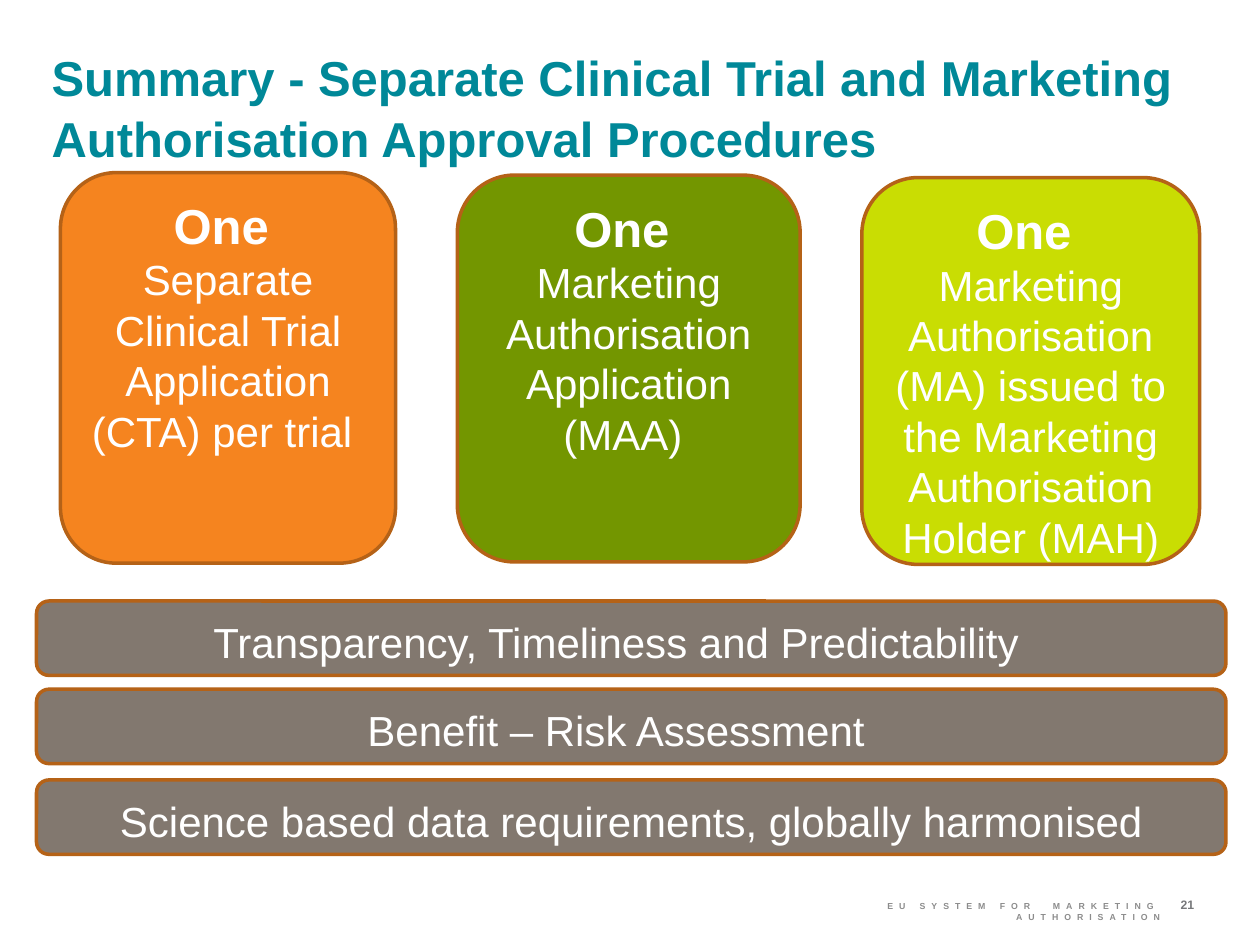
from dataclasses import dataclass

from pptx import Presentation
from pptx.dml.color import RGBColor as RGB
from pptx.enum.shapes import MSO_SHAPE as Shape
from pptx.enum.text import MSO_ANCHOR as Anchor, MSO_AUTO_SIZE as Fit, PP_ALIGN as Align
from pptx.util import Inches, Pt


@dataclass(frozen=True)
class Theme:
    font: str = "Arial"
    teal: str = "008898"
    orange: str = "F5841F"
    green: str = "739600"
    lime: str = "C9DD03"
    taupe: str = "82786F"
    rust: str = "B56217"
    white: str = "FFFFFF"
    silver: str = "8C8C8C"
    grey: str = "77787B"
    head: int = 28
    body: int = 24
    page: int = 7
    foot: int = 5


class Deck:
    """Draw styled elements on the current slide."""

    def __init__(self, prs, theme):
        self.theme = theme
        self.slide = prs.slides.add_slide(prs.slide_layouts[5])

    def frame(self, shape, pad=(0, 0, 0, 0), anchor=Anchor.TOP):
        left, top, right, base = map(Inches, pad)
        form = dict(word_wrap=True, auto_size=Fit.NONE, vertical_anchor=anchor,
                    margin_left=left, margin_top=top, margin_right=right, margin_bottom=base)
        for key, val in form.items():
            setattr(shape.text_frame, key, val)
        return shape.text_frame

    def words(self, para, text, size, color, bold=False, align=Align.LEFT, track=0):
        para.alignment = align
        run = para.add_run()
        run.text = text
        form = dict(name=self.theme.font, size=Pt(size), bold=bold)
        for key, val in form.items():
            setattr(run.font, key, val)
        run.font.color.rgb = RGB.from_string(color)
        if track:
            run._r.get_or_add_rPr().set("spc", str(track))

    def title(self, text, box):
        shape = self.slide.shapes.title
        for key, val in zip(("left", "top", "width", "height"), box):
            setattr(shape, key, Inches(val))
        para = self.frame(shape).paragraphs[0]
        para.line_spacing = 1.05
        self.words(para, text, self.theme.head, self.theme.teal, True)

    def panel(self, box, fill):
        shape = self.slide.shapes.add_shape(Shape.ROUNDED_RECTANGLE, *map(Inches, box))
        shape.shadow.inherit = False
        shape.fill.solid()
        shape.fill.fore_color.rgb = RGB.from_string(fill)
        shape.line.color.rgb = RGB.from_string(self.theme.rust)
        shape.line.width = Pt(2)
        return shape

    def card(self, head, text, box, fill):
        look = self.theme
        body = self.frame(self.panel(box, fill), (0.1, 0.05, 0.1, 0.05))
        self.words(body.paragraphs[0], head, look.head, look.white, True, Align.CENTER)
        self.words(body.add_paragraph(), text, look.body, look.white, align=Align.CENTER)

    def bar(self, text, box, right):
        look = self.theme
        body = self.frame(self.panel(box, look.taupe), (0, 0.05, right, 0), Anchor.MIDDLE)
        self.words(body.paragraphs[0], text, look.body, look.white, align=Align.CENTER)

    def label(self, text, box, size, color, **form):
        shape = self.slide.shapes.add_textbox(*map(Inches, box))
        self.words(self.frame(shape).paragraphs[0], text, size, color, True, **form)


def main():
    prs = Presentation()
    prs.slide_width, prs.slide_height = Inches(10), Inches(7.5)
    look = Theme()
    deck = Deck(prs, look)
    deck.title("Summary - Separate Clinical Trial and Marketing Authorisation Approval Procedures",
               (0.41, 0.35, 8.91, 0.95))
    cards = (
        ("Separate Clinical Trial Application (CTA) per trial ",
         (0.48, 1.37, 2.66, 3.1), look.orange),
        ("Marketing Authorisation Application (MAA) ",
         (3.63, 1.39, 2.72, 3.07), look.green),
        ("Marketing Authorisation (MA) issued to the Marketing Authorisation Holder (MAH)",
         (6.84, 1.41, 2.68, 3.07), look.lime),
    )
    for text, box, fill in cards:
        deck.card("One ", text, box, fill)
    bars = (
        ("Transparency, Timeliness and Predictability", 4.77, 0.24),
        ("Benefit – Risk Assessment", 5.47, 0.24),
        ("Science based data requirements, globally harmonised", 6.19, 0),
    )
    for text, top, right in bars:
        deck.bar(text, (0.29, top, 9.44, 0.59), right)
    deck.label("EU SYSTEM FOR  MARKETING AUTHORISATION", (6.14, 7.15, 3.07, 0.16),
               look.foot, look.silver, align=Align.RIGHT, track=340)
    deck.label("21", (9.37, 7.12, 0.43, 0.17), look.page, look.grey)
    prs.save("out.pptx")


if __name__ == "__main__":
    main()
